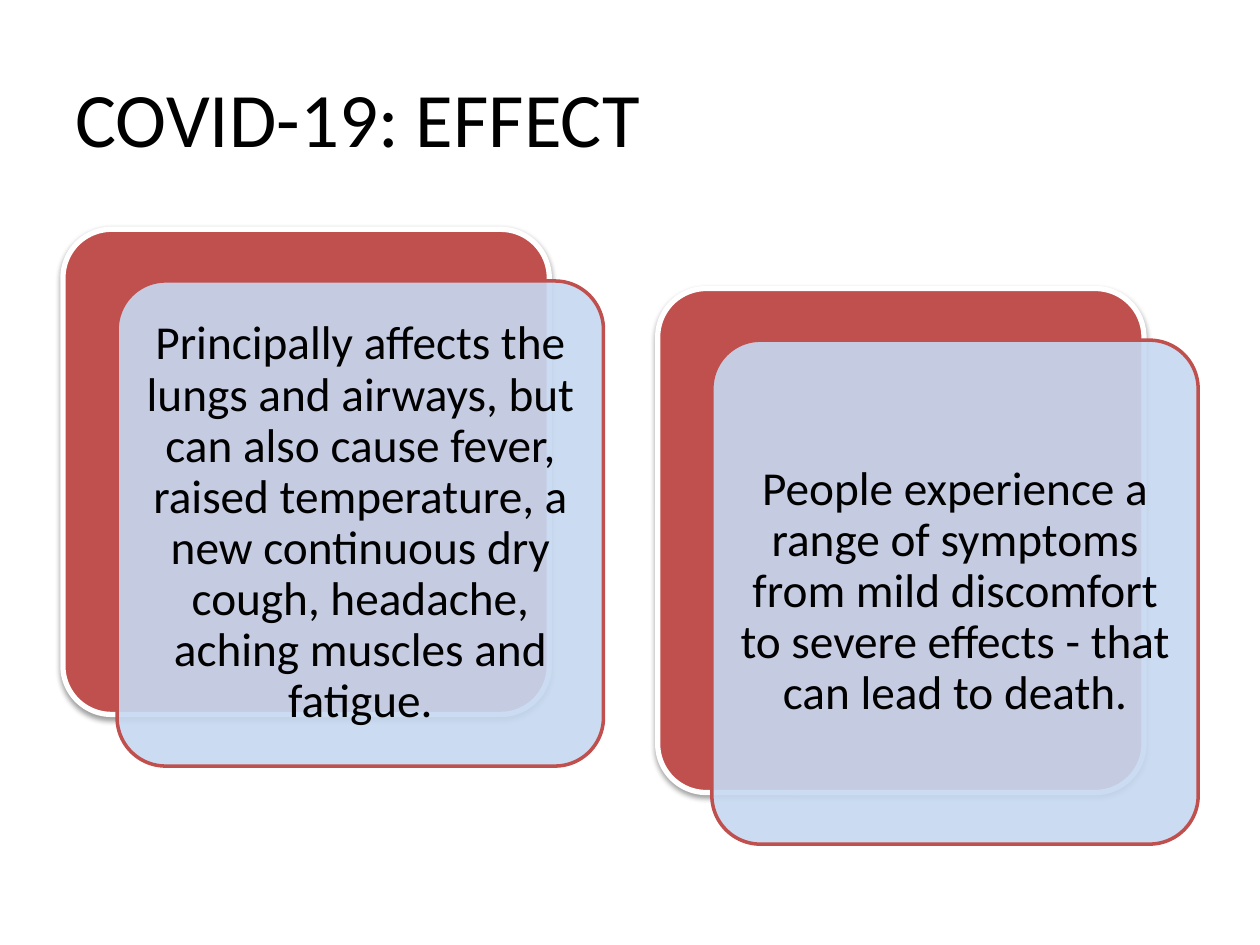
from lxml import etree
from pptx import Presentation
from pptx.dml.color import RGBColor
from pptx.enum.shapes import MSO_SHAPE
from pptx.enum.text import MSO_ANCHOR, PP_ALIGN
from pptx.oxml.ns import qn
from pptx.util import Inches, Pt

ROUNDED = MSO_SHAPE.ROUNDED_RECTANGLE
MIDDLE = MSO_ANCHOR.MIDDLE
LEFT, CENTER = PP_ALIGN.LEFT, PP_ALIGN.CENTER
TITLE_ONLY = 5

RED, PALE_BLUE, WHITE, BLACK = "C0504D", "C6D9F1", "FFFFFF", "000000"
CARD_WIDTH = 3.86
FRONT_SHIFT_X, FRONT_SHIFT_Y = 0.43, 0.41
TEXT_MARGIN = 0.11

CARDS = [
    (0.5, 1.82, 3.85,
     "Principally affects the lungs and airways, but can also cause fever, "
     "raised temperature, a new continuous dry cough, headache, aching "
     "muscles and fatigue."),
    (5.22, 2.29, 4,
     "People experience a range of symptoms from mild discomfort to severe "
     "effects - that can lead to death."),
]


def color(value):
    return RGBColor.from_string(value)


def apply(target, values):
    for name, value in values.items():
        setattr(target, name, value)


class SlideBuilder:
    font = "Calibri"
    title_size = 44
    body_size = 27

    def __init__(self, deck):
        self.slide = deck.slides.add_slide(deck.slide_layouts[TITLE_ONLY])

    def fill_text(self, frame, text, size, alignment, line_spacing=1.0):
        apply(frame, {"word_wrap": True, "vertical_anchor": MIDDLE})
        para = frame.paragraphs[0]
        apply(para, {"alignment": alignment, "line_spacing": line_spacing})
        span = para.add_run()
        span.text = text
        apply(span.font, {"name": self.font, "size": Pt(size)})
        span.font.color.rgb = color(BLACK)

    def title(self, text, left, top, width, height):
        box = self.slide.shapes.title
        apply(box, {"left": Inches(left), "top": Inches(top),
                    "width": Inches(width), "height": Inches(height)})
        self.fill_text(box.text_frame, text, self.title_size, LEFT)

    def panel(self, left, top, width, height, fill, line, line_width):
        panel = self.slide.shapes.add_shape(
            ROUNDED, Inches(left), Inches(top), Inches(width), Inches(height))
        panel.adjustments[0] = 0.1
        panel.shadow.inherit = False
        panel.fill.solid()
        panel.fill.fore_color.rgb = color(fill)
        panel.line.color.rgb = color(line)
        panel.line.width = Pt(line_width)
        return panel

    def add_shadow(self, shape):
        effects = shape.element.spPr.find(qn("a:effectLst"))
        shadow = etree.SubElement(
            effects, qn("a:outerShdw"), blurRad=str(Pt(3.1)),
            dist=str(Pt(1.6)), dir="5400000", rotWithShape="0")
        shade = etree.SubElement(shadow, qn("a:srgbClr"), val=BLACK)
        etree.SubElement(shade, qn("a:alpha"), val="38000")

    def set_opacity(self, shape, percent):
        fill = shape.element.spPr.find(qn("a:solidFill"))
        etree.SubElement(fill[0], qn("a:alpha"), val=str(percent * 1000))

    def text(self, text, left, top, width, height):
        box = self.slide.shapes.add_textbox(
            Inches(left), Inches(top), Inches(width), Inches(height))
        inset = Inches(0.11)
        apply(box.text_frame, {"margin_left": inset, "margin_right": inset,
                               "margin_top": inset, "margin_bottom": inset})
        self.fill_text(box.text_frame, text, self.body_size, CENTER, 0.9)

    def card(self, left, top, height, text):
        """Draw a red panel with a translucent text panel offset over it."""
        back = self.panel(left, top, CARD_WIDTH, height, RED, WHITE, 3)
        self.add_shadow(back)
        left, top = left + FRONT_SHIFT_X, top + FRONT_SHIFT_Y
        front = self.panel(left, top, CARD_WIDTH, height, PALE_BLUE, RED, 2)
        self.set_opacity(front, 90)
        self.text(text, left + TEXT_MARGIN, top + TEXT_MARGIN,
                  CARD_WIDTH - 2 * TEXT_MARGIN, height - 2 * TEXT_MARGIN)


def main():
    deck = Presentation()
    deck.slide_width, deck.slide_height = Inches(10), Inches(7.5)
    page = SlideBuilder(deck)
    page.title("COVID-19: EFFECT", 0.5, 0.3, 9, 1.25)
    for card in CARDS:
        page.card(*card)
    deck.save("out.pptx")


if __name__ == "__main__":
    main()
